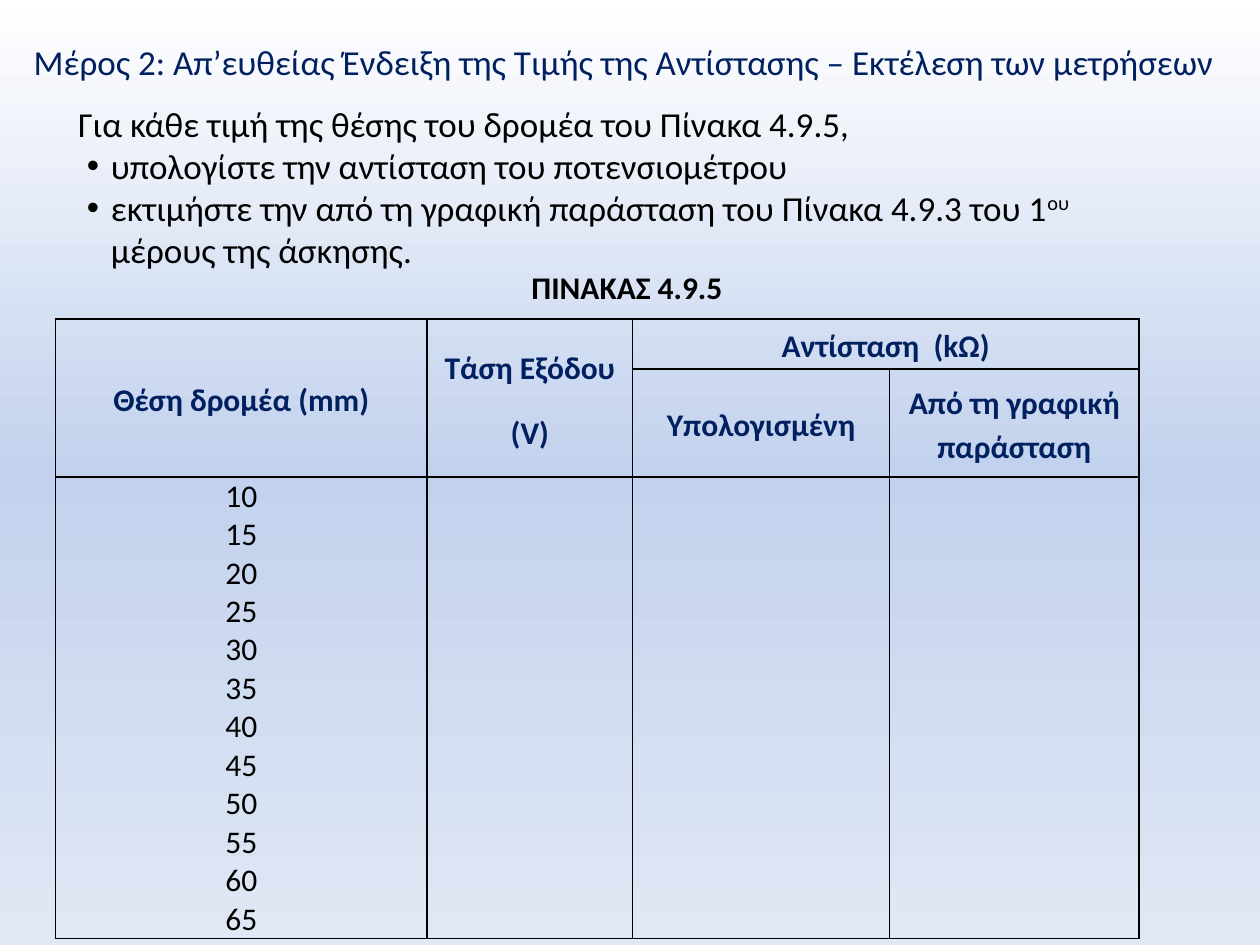
from pptx import Presentation
from pptx.dml.color import RGBColor
from pptx.enum.text import MSO_ANCHOR, MSO_AUTO_SIZE, PP_ALIGN
from pptx.oxml import parse_xml
from pptx.oxml.ns import nsdecls
from pptx.util import Inches, Pt

CENTER, LEFT = PP_ALIGN.CENTER, PP_ALIGN.LEFT
MIDDLE, TOP = MSO_ANCHOR.MIDDLE, MSO_ANCHOR.TOP
NO_AUTOFIT = MSO_AUTO_SIZE.NONE
NAVY = RGBColor(0x00, 0x20, 0x60)
BLACK = RGBColor(0x00, 0x00, 0x00)
FONT = "Calibri"
GRADIENT = [(0, "FFFFFF"), (50, "C2D1ED"), (100, "E1E8F5")]

INTRO = [
    (False, ["Για κάθε τιμή της θέσης του δρομέα του Πίνακα 4.9.5,"]),
    (True, ["υπολογίστε την αντίσταση του ποτενσιομέτρου"]),
    (True, ["εκτιμήστε την από τη γραφική παράσταση του Πίνακα 4.9.3 του 1",
            "ου", " μέρους της άσκησης."]),
]
COLUMN_WIDTHS = [2.95, 1.63, 2.04, 1.98]
ROW_HEIGHTS = [0.4, 0.85, 3.66]
MERGES = [((0, 0), (1, 0)), ((0, 1), (1, 1)), ((0, 2), (0, 3))]
HEADERS = {
    (0, 0): ["Θέση δρομέα (mm)"],
    (0, 1): ["Τάση Εξόδου", "(V)"],
    (0, 2): ["Αντίσταση  (kΩ)"],
    (1, 2): ["Υπολογισμένη"],
    (1, 3): ["Από τη γραφική παράσταση"],
}
POSITIONS = [str(mm) for mm in range(10, 70, 5)]


def set_all(obj, **values):
    for name, value in values.items():
        setattr(obj, name, value)


def place(sp, left, top, width, height):
    set_all(sp, left=Inches(left), top=Inches(top),
            width=Inches(width), height=Inches(height))


def add_run(p, text, size, color, bold=False):
    r = p.add_run()
    r.text = text
    set_all(r.font, name=FONT, size=Pt(size), bold=bold)
    r.font.color.rgb = color
    return r


def set_background(s):
    s.background.fill.solid()
    stops = "".join(f'<a:gs pos="{pos * 1000}"><a:srgbClr val="{color}"/></a:gs>'
                    for pos, color in GRADIENT)
    grad = parse_xml(f'<a:gradFill {nsdecls("a")} rotWithShape="1"><a:gsLst>{stops}'
                     '</a:gsLst><a:lin ang="5400000" scaled="0"/></a:gradFill>')
    bg_pr = s.background._cSld.bg.bgPr
    bg_pr.replace(bg_pr[0], grad)


def fill_title(s, *box):
    sp = s.shapes.title
    place(sp, *box)
    tf = sp.text_frame
    set_all(tf, auto_size=NO_AUTOFIT, word_wrap=True, vertical_anchor=MIDDLE)
    p = tf.paragraphs[0]
    p.alignment = CENTER
    add_run(p, "Μέρος 2: Απ’ευθείας Ένδειξη της Τιμής της Αντίστασης – "
               "Εκτέλεση των μετρήσεων ", 20, NAVY)


def set_bullet(p, bulleted):
    pPr = p._p.get_or_add_pPr()
    pPr.set("marL", str(Inches(0.26 if bulleted else 0.19)))
    pPr.set("indent", str(Inches(-0.19)))
    if bulleted:
        pPr.append(parse_xml(f'<a:buFont {nsdecls("a")} typeface="Arial"/>'))
        pPr.append(parse_xml(f'<a:buChar {nsdecls("a")} char="•"/>'))
    else:
        pPr.append(parse_xml(f'<a:buNone {nsdecls("a")}/>'))


def fill_intro(s, *box):
    sp = s.placeholders[1]
    place(sp, *box)
    tf = sp.text_frame
    set_all(tf, auto_size=NO_AUTOFIT, word_wrap=True, vertical_anchor=TOP,
            margin_right=Inches(0.3))
    for i, (bulleted, texts) in enumerate(INTRO):
        p = tf.add_paragraph() if i else tf.paragraphs[0]
        set_all(p, alignment=LEFT, space_before=Pt(0))
        set_bullet(p, bulleted)
        for text in texts:
            r = add_run(p, text, 20, BLACK)
            if text == "ου":
                r.font._element.set("baseline", "30000")


def add_caption(s, *box):
    tf = s.shapes.add_textbox(*map(Inches, box)).text_frame
    tf.word_wrap = False
    add_run(tf.paragraphs[0], "ΠΙΝΑΚΑΣ 4.9.5", 18, BLACK, bold=True)


def format_cell(cell):
    set_all(cell, vertical_anchor=MIDDLE, margin_left=Inches(0.07),
            margin_right=Inches(0.07), margin_top=0, margin_bottom=0)
    tcPr = cell._tc.get_or_add_tcPr()
    for side in ("lnL", "lnR", "lnT", "lnB"):
        tcPr.append(parse_xml(
            f'<a:{side} {nsdecls("a")} w="{Pt(1)}"><a:solidFill>'
            f'<a:srgbClr val="{BLACK}"/></a:solidFill></a:{side}>'))
    cell.fill.background()


def write_cell(cell, lines, color, bold, **spacing):
    tf = cell.text_frame
    for i, line in enumerate(lines):
        p = tf.add_paragraph() if i else tf.paragraphs[0]
        set_all(p, alignment=CENTER, **spacing)
        add_run(p, line, 18, color, bold)


def add_measurements(s, left, top):
    frame = s.shapes.add_table(
        len(ROW_HEIGHTS), len(COLUMN_WIDTHS), Inches(left), Inches(top),
        Inches(sum(COLUMN_WIDTHS)), Inches(sum(ROW_HEIGHTS)))
    table = frame.table
    set_all(table, first_row=False, horz_banding=False)
    for column, width in zip(table.columns, COLUMN_WIDTHS):
        column.width = Inches(width)
    for row, height in zip(table.rows, ROW_HEIGHTS):
        row.height = Inches(height)
    for cell in table.iter_cells():
        format_cell(cell)
    for start, end in MERGES:
        table.cell(*start).merge(table.cell(*end))
    for position, lines in HEADERS.items():
        write_cell(table.cell(*position), lines, NAVY, True, line_spacing=1.15,
                   space_before=Pt(6), space_after=Pt(6))
    write_cell(table.cell(2, 0), POSITIONS, BLACK, False)


def main():
    prs = Presentation()
    set_all(prs, slide_width=Inches(10), slide_height=Inches(7.5))
    s = prs.slides.add_slide(prs.slide_layouts[1])
    set_background(s)
    fill_title(s, 0.16, 0.27, 9.65, 0.44)
    fill_intro(s, 0.52, 0.76, 8.94, 1.45)
    add_caption(s, 4.12, 2.08, 1.73, 0.4)
    add_measurements(s, 0.44, 2.53)
    prs.save("out.pptx")


if __name__ == "__main__":
    main()
